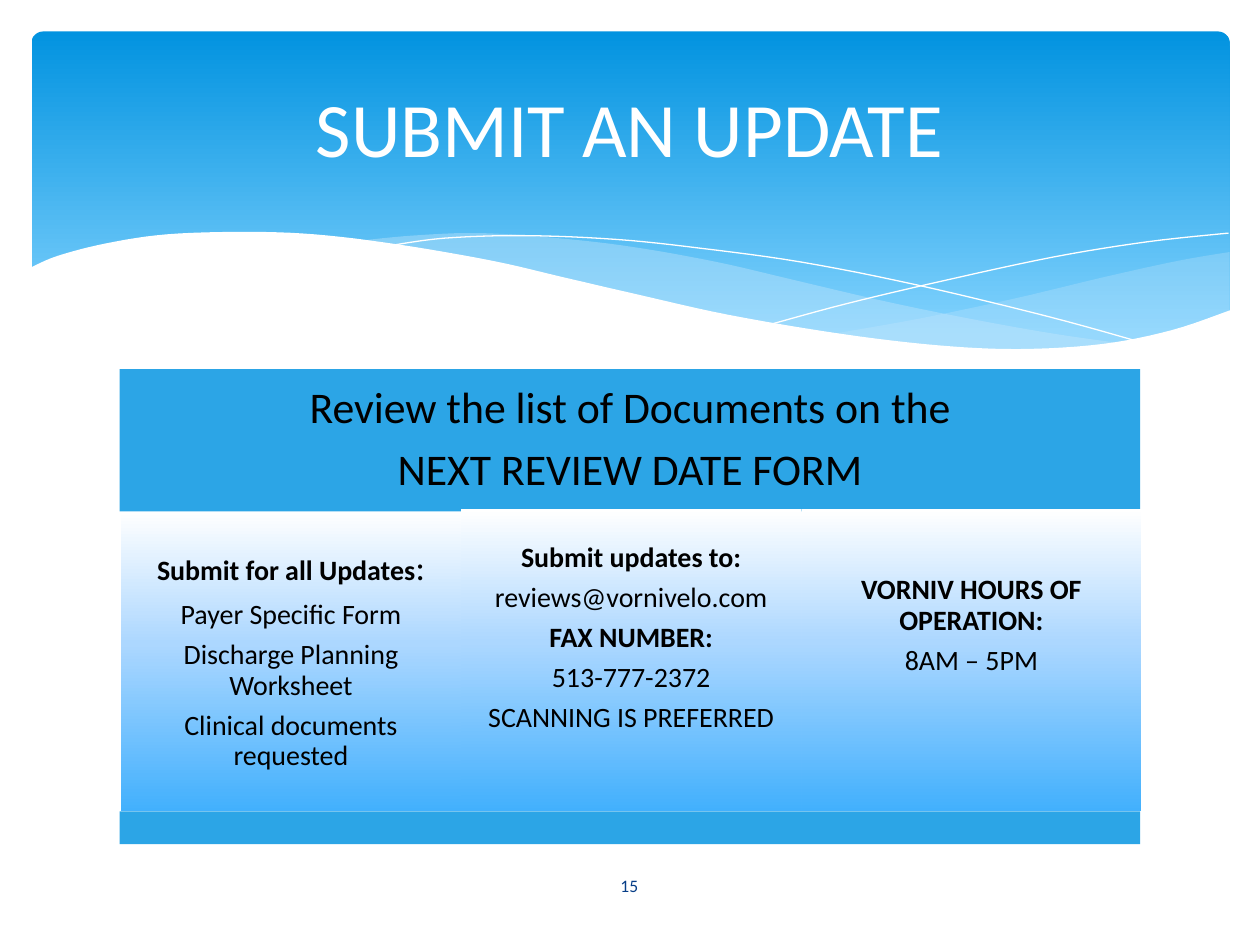
from dataclasses import dataclass
from typing import NamedTuple

from lxml import etree
from pptx import Presentation
from pptx.dml.color import RGBColor
from pptx.enum.shapes import MSO_SHAPE
from pptx.enum.text import MSO_ANCHOR, PP_ALIGN
from pptx.oxml.ns import qn
from pptx.util import Inches, Pt

RECT, ROUND = MSO_SHAPE.RECTANGLE, MSO_SHAPE.ROUNDED_RECTANGLE
TOP, MIDDLE, CENTER = MSO_ANCHOR.TOP, MSO_ANCHOR.MIDDLE, PP_ALIGN.CENTER
COLS, ROWS = 1000, 750
CELL = Inches(0.01)


@dataclass(frozen=True)
class Theme:
    font: str = "Calibri"
    white: str = "FFFFFF"
    black: str = "000000"
    bar: str = "2CA5E6"
    mist: str = "C6E7FC"
    navy: str = "073E87"
    sky: tuple = ((0, "0293E0"), (90, "83D3FE"))
    fade: tuple = ((0, "FFFFFF"), (44, "ACD7FF"), (100, "42B0FD"))
    title: int = 44
    head: int = 25
    colon: int = 20
    body: int = 16
    small: int = 10


THEME = Theme()


class Box(NamedTuple):
    col: float
    row: float
    wide: float
    high: float


class Run(NamedTuple):
    text: str
    size: int = THEME.body
    bold: bool = False
    color: str = THEME.black


class Card(NamedTuple):
    row: float
    end: float
    pad: float
    lines: list


class Wave(NamedTuple):
    edges: list
    fill: str = ""
    alpha: int = 100


LEFT, WIDE = 95, 810
STEP = WIDE / 3

# Each edge is a list of (column, row) knots, joined by a smooth curve.
WAVES = [
    Wave([[(976, 200), (935, 207), (876, 220), (805, 237), (729, 253), (661, 265)],
          [(661, 265), (705, 271), (757, 276), (803, 278), (854, 276), (897, 270),
           (935, 262), (976, 247)]], THEME.mist, 29),
    Wave([[(893, 273), (837, 265), (775, 254), (706, 240), (629, 222), (569, 208),
           (502, 196), (442, 189), (380, 185), (328, 187), (286, 191)],
          [(286, 191), (342, 199), (404, 211), (449, 222), (530, 240), (601, 255),
           (665, 266), (722, 274), (773, 277), (828, 278), (893, 273)]],
         THEME.mist, 40),
    Wave([[(309, 195), (353, 189), (416, 187), (489, 190), (556, 197), (636, 208),
           (727, 226), (831, 251), (907, 272)]]),
    Wave([[(613, 257), (672, 241), (748, 223), (836, 204), (910, 192), (975, 185)]]),
    Wave([[(977, 246), (930, 262), (875, 273), (809, 277), (744, 274), (668, 265),
           (579, 250), (503, 233), (447, 220), (391, 207), (316, 194), (250, 186),
           (193, 184), (132, 186), (85, 193), (46, 203), (23, 213)],
          [(23, 213), (23, 329)], [(23, 329), (977, 329)]], THEME.white),
]

CARDS = [
    Card(406, 644, 31, [
        [Run("Submit for all Updates", bold=True), Run(":", THEME.colon)],
        [Run("Payer Specific Form")],
        [Run("Discharge Planning Worksheet")],
        [Run("Clinical documents requested")]]),
    Card(404, 644, 27, [
        [Run("Submit updates to:", bold=True)],
        [Run("reviews@vornivelo.com")],
        [Run("FAX NUMBER:", bold=True)],
        [Run("513-777-2372")],
        [Run("SCANNING IS PREFERRED")]]),
    Card(404, 644, 53, [
        [Run("VORNIV HOURS OF OPERATION:", bold=True)],
        [Run("8AM – 5PM")]]),
]


def rgb(code: str) -> RGBColor:
    return RGBColor.from_string(code)


def place(box: Box) -> list[int]:
    return [round(n * CELL) for n in box]


def paint(shape, fill, alpha: int = 100) -> None:
    """Fill with one colour, or with (percent, colour) stops from top to bottom."""
    shape.shadow.inherit = False
    shape.line.fill.background()
    if isinstance(fill, str):
        shape.fill.solid()
        shape.fill.fore_color.rgb = rgb(fill)
        if alpha < 100:
            color = shape.element.spPr.find(".//" + qn("a:srgbClr"))
            etree.SubElement(color, qn("a:alpha"), val=str(alpha * 1000))
        return
    shape.fill.gradient()
    shape.fill.gradient_angle = 270
    stops = shape.element.spPr.find(".//" + qn("a:gsLst"))
    for old in list(stops):
        stops.remove(old)
    for share, code in fill:
        stop = etree.SubElement(stops, qn("a:gs"), pos=str(share * 1000))
        etree.SubElement(stop, qn("a:srgbClr"), val=code)


def smooth(knots: list, parts: int = 6) -> list:
    """Trace a Catmull-Rom curve through the knots."""
    ends = [knots[0], *knots, knots[-1]]
    trace = [knots[0]]
    for a, b, c, d in zip(ends, ends[1:], ends[2:], ends[3:]):
        for k in range(1, parts + 1):
            t = k / parts
            trace.append(tuple(
                q + t / 2 * (r - p + t * (2 * p - 5 * q + 4 * r - s
                                          + t * (3 * (q - r) + s - p)))
                for p, q, r, s in zip(a, b, c, d)))
    return trace


def draw_wave(shapes, wave: Wave) -> None:
    trace = [(x * CELL, y * CELL) for edge in wave.edges for x, y in smooth(edge)]
    pen = shapes.build_freeform(*trace[0])
    pen.add_line_segments(trace[1:], close=bool(wave.fill))
    shape = pen.convert_to_shape()
    if wave.fill:
        paint(shape, wave.fill, wave.alpha)
        return
    shape.shadow.inherit = False
    shape.fill.background()
    shape.line.color.rgb = rgb(THEME.white)
    shape.line.width = Pt(0)


def draw_block(shapes, box: Box, fill, kind=RECT):
    shape = shapes.add_shape(kind, *place(box))
    paint(shape, fill)
    return shape


def write(shape, lines: list, anchor=MIDDLE, pad: float = 5, side: float = 7) -> None:
    frame = shape.text_frame
    look = {"word_wrap": True, "vertical_anchor": anchor,
            "margin_left": side * CELL, "margin_right": side * CELL,
            "margin_top": pad * CELL, "margin_bottom": 5 * CELL}
    for name, value in look.items():
        setattr(frame, name, value)
    for i, line in enumerate(lines):
        para = frame.add_paragraph() if i else frame.paragraphs[0]
        gap = Pt(0.35 * max(run.size for run in line))
        look = {"alignment": CENTER, "line_spacing": 0.9, "space_after": gap}
        for name, value in look.items():
            setattr(para, name, value)
        for run in line:
            part = para.add_run()
            part.text = run.text
            look = {"name": THEME.font, "size": Pt(run.size), "bold": run.bold}
            for name, value in look.items():
                setattr(part.font, name, value)
            part.font.color.rgb = rgb(run.color)


def main() -> None:
    deck = Presentation()
    deck.slide_width, deck.slide_height = COLS * CELL, ROWS * CELL
    shapes = deck.slides.add_slide(deck.slide_layouts[6]).shapes

    banner = draw_block(shapes, Box(25, 25, 951, 270), THEME.sky, ROUND)
    banner.adjustments[0] = 0.034
    for wave in WAVES:
        draw_wave(shapes, wave)

    head = draw_block(shapes, Box(LEFT, 293, WIDE, 113), THEME.bar)
    write(head, [[Run("Review the list of Documents on the", THEME.head)],
                 [Run("NEXT REVIEW DATE FORM", THEME.head)]])
    for i, card in enumerate(CARDS):
        box = Box(LEFT + 1 + i * STEP, card.row, STEP, card.end - card.row)
        write(draw_block(shapes, box, THEME.fade), card.lines, TOP, card.pad)
    draw_block(shapes, Box(LEFT, 644, WIDE, 26), THEME.bar)

    for box, run in (
        (Box(436, 684, 127, 40), Run("15", THEME.small, color=THEME.navy)),
        (Box(50, 37, 900, 137), Run("SUBMIT AN UPDATE", THEME.title, color=THEME.white)),
    ):
        write(shapes.add_textbox(*place(box)), [[run]])
    deck.save("out.pptx")


if __name__ == "__main__":
    main()
